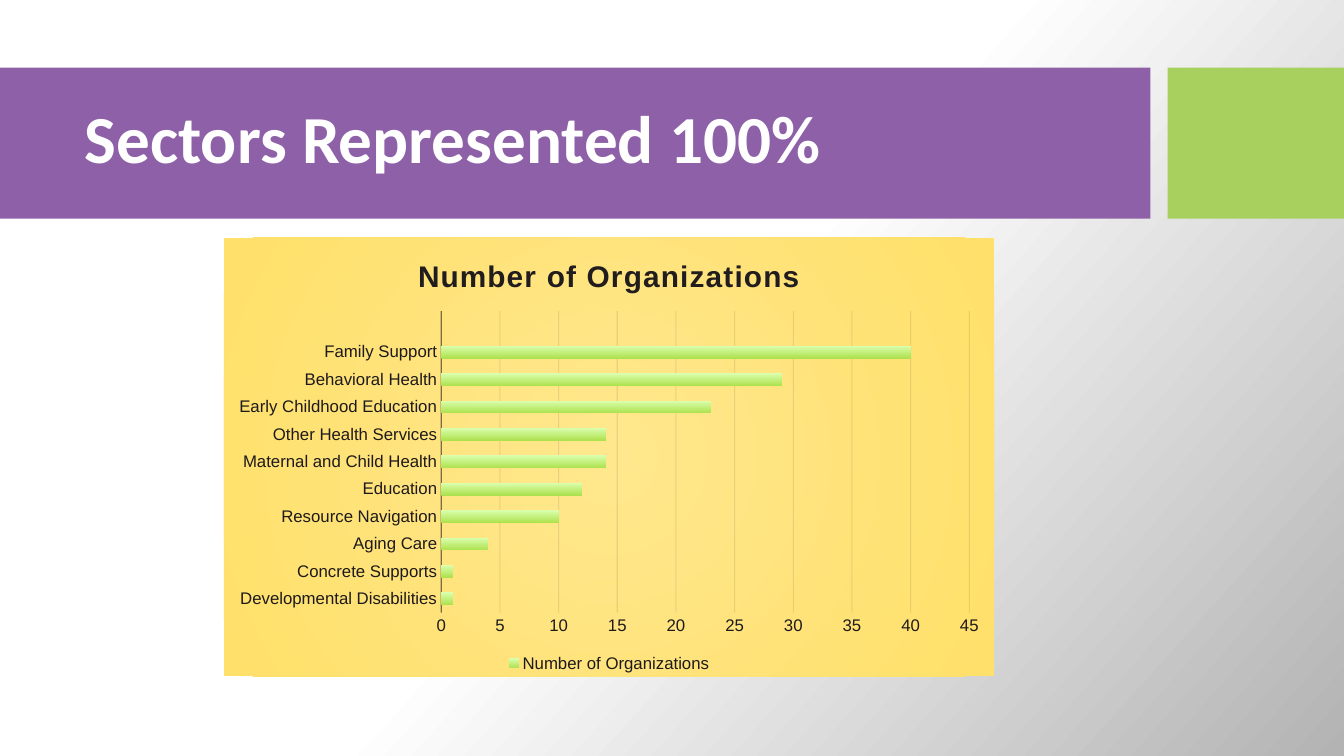
from lxml.etree import SubElement
from pptx import Presentation
from pptx.chart.data import CategoryChartData
from pptx.dml.color import RGBColor
from pptx.enum.chart import XL_CHART_TYPE as ChartType
from pptx.enum.chart import XL_LEGEND_POSITION as LegendPosition
from pptx.enum.chart import XL_TICK_MARK as TickMark
from pptx.enum.shapes import MSO_SHAPE as Shape
from pptx.enum.text import MSO_ANCHOR as Anchor
from pptx.enum.text import MSO_AUTO_SIZE as AutoSize
from pptx.enum.text import PP_ALIGN as Align
from pptx.oxml import parse_xml
from pptx.oxml.ns import nsdecls, qn
from pptx.util import Inches, Pt

TITLE = "Sectors Represented 100%"
MEASURE = "Number of Organizations"
SECTORS = [
    ("Developmental Disabilities", 1),
    ("Concrete Supports", 1),
    ("Aging Care", 4),
    ("Resource Navigation", 10),
    ("Education", 12),
    ("Maternal and Child Health", 14),
    ("Other Health Services", 14),
    ("Early Childhood Education", 23),
    ("Behavioral Health", 29),
    ("Family Support", 40),
    ("", None),
]

WHITE = RGBColor(0xFF, 0xFF, 0xFF)
GREY = RGBColor(0xB3, 0xB3, 0xB3)
PURPLE = RGBColor(0x8D, 0x60, 0xA8)
GREEN = RGBColor(0xA7, 0xD0, 0x5E)
INK = RGBColor(0x21, 0x1D, 0x1E)
LABEL = RGBColor(0x1E, 0x1A, 0x1B)
PALE_YELLOW = RGBColor(0xFF, 0xE7, 0x8D)
YELLOW = RGBColor(0xFF, 0xE0, 0x6A)
LIME = RGBColor(0xAC, 0xE1, 0x4D)
PALE_LIME = RGBColor(0xDB, 0xFF, 0xAF)

BANDS = [(0, 11.41, PURPLE), (11.58, 1.75, GREEN)]
LINEAR = '<a:lin ang="{}" scaled="0"/>'
RADIAL = ('<a:path path="circle"><a:fillToRect l="50000" t="50000" '
          'r="50000" b="50000"/></a:path>')


def gradient(stops, direction):
    marks = "".join(
        f'<a:gs pos="{place * 1000}"><a:srgbClr val="{color}"/></a:gs>'
        for place, color in stops)
    return parse_xml(f'<a:gradFill {nsdecls("a")} rotWithShape="1">'
                     f'<a:gsLst>{marks}</a:gsLst>{direction}</a:gradFill>')


def replace_solid(properties, fill):
    properties.replace(properties.find(qn("a:solidFill")), fill)


def style_line(line, width, opacity):
    line.width = Pt(width)
    line.color.rgb = INK
    color = line._ln.find(".//" + qn("a:srgbClr"))
    SubElement(color, qn("a:alpha"), val=str(opacity * 1000))


def style_font(font, size, color, bold=False):
    font.name = "Arial"
    font.size = Pt(size)
    font.color.rgb = color
    font.bold = bold


def add_header(page):
    for left, width, color in BANDS:
        band = page.shapes.add_shape(Shape.RECTANGLE, Inches(left), Inches(0.67),
                                     Inches(width), Inches(1.5))
        band.shadow.inherit = False
        band.fill.solid()
        band.fill.fore_color.rgb = color
        band.line.fill.background()
    title = page.shapes.title
    page.shapes._spTree.append(title._element)
    title.left, title.top = Inches(0.74), Inches(0.82)
    title.width, title.height = Inches(10.51), Inches(1.18)
    frame = title.text_frame
    frame.text = TITLE
    frame.word_wrap = True
    frame.auto_size = AutoSize.NONE
    frame.vertical_anchor = Anchor.MIDDLE
    para = frame.paragraphs[0]
    para.alignment = Align.LEFT
    para.line_spacing = 0.9
    para.font.name = "Calibri"
    para.font.size = Pt(48)
    para.font.bold = True
    para.font.color.rgb = WHITE


def add_sector_chart(page):
    data = CategoryChartData()
    data.categories = [name for name, count in SECTORS]
    data.add_series(MEASURE, [count for name, count in SECTORS])
    chart = page.shapes.add_chart(ChartType.BAR_CLUSTERED, Inches(2.22), Inches(2.36),
                                  Inches(7.64), Inches(4.35), data).chart
    style_font(chart.font, 10, LABEL)

    area = parse_xml(f'<c:spPr {nsdecls("c", "a")}><a:ln><a:noFill/></a:ln></c:spPr>')
    area.insert(0, gradient([(0, PALE_YELLOW), (100, YELLOW)], RADIAL))
    chart._chartSpace.chart.addnext(area)

    chart.has_title = True
    chart.chart_title.include_in_layout = False
    heading = chart.chart_title.text_frame
    heading.text = MEASURE
    span = heading.paragraphs[0].runs[0]
    style_font(span.font, 21.3, INK, True)
    span.font._element.set("spc", "100")

    chart.has_legend = True
    chart.legend.position = LegendPosition.BOTTOM
    chart.legend.include_in_layout = False
    style_font(chart.legend.font, 12, LABEL)

    for axis in (chart.category_axis, chart.value_axis):
        axis.major_tick_mark = axis.minor_tick_mark = TickMark.NONE
        style_font(axis.tick_labels.font, 12, LABEL)
    style_line(chart.category_axis.format.line, 1, 54)
    chart.value_axis.format.line.fill.background()
    chart.value_axis.has_major_gridlines = True
    style_line(chart.value_axis.major_gridlines.format.line, 0.75, 10)

    plot = chart.plots[0]
    plot.vary_by_categories = False
    plot.gap_width = 115
    plot.overlap = -20
    series = plot.series[0]
    series.invert_if_negative = False
    series.format.fill.solid()
    replace_solid(series._element.spPr,
                  gradient([(0, LIME), (100, PALE_LIME)], LINEAR.format(270 * 60000)))


def main():
    deck = Presentation()
    deck.slide_width, deck.slide_height = Inches(13.33), Inches(7.5)
    page = deck.slides.add_slide(deck.slide_layouts[5])
    page.background.fill.solid()
    replace_solid(page._element.find(".//" + qn("p:bgPr")),
                  gradient([(0, WHITE), (50, WHITE), (100, GREY)],
                           LINEAR.format(42 * 60000)))
    add_header(page)
    add_sector_chart(page)
    deck.save("out.pptx")


if __name__ == "__main__":
    main()
